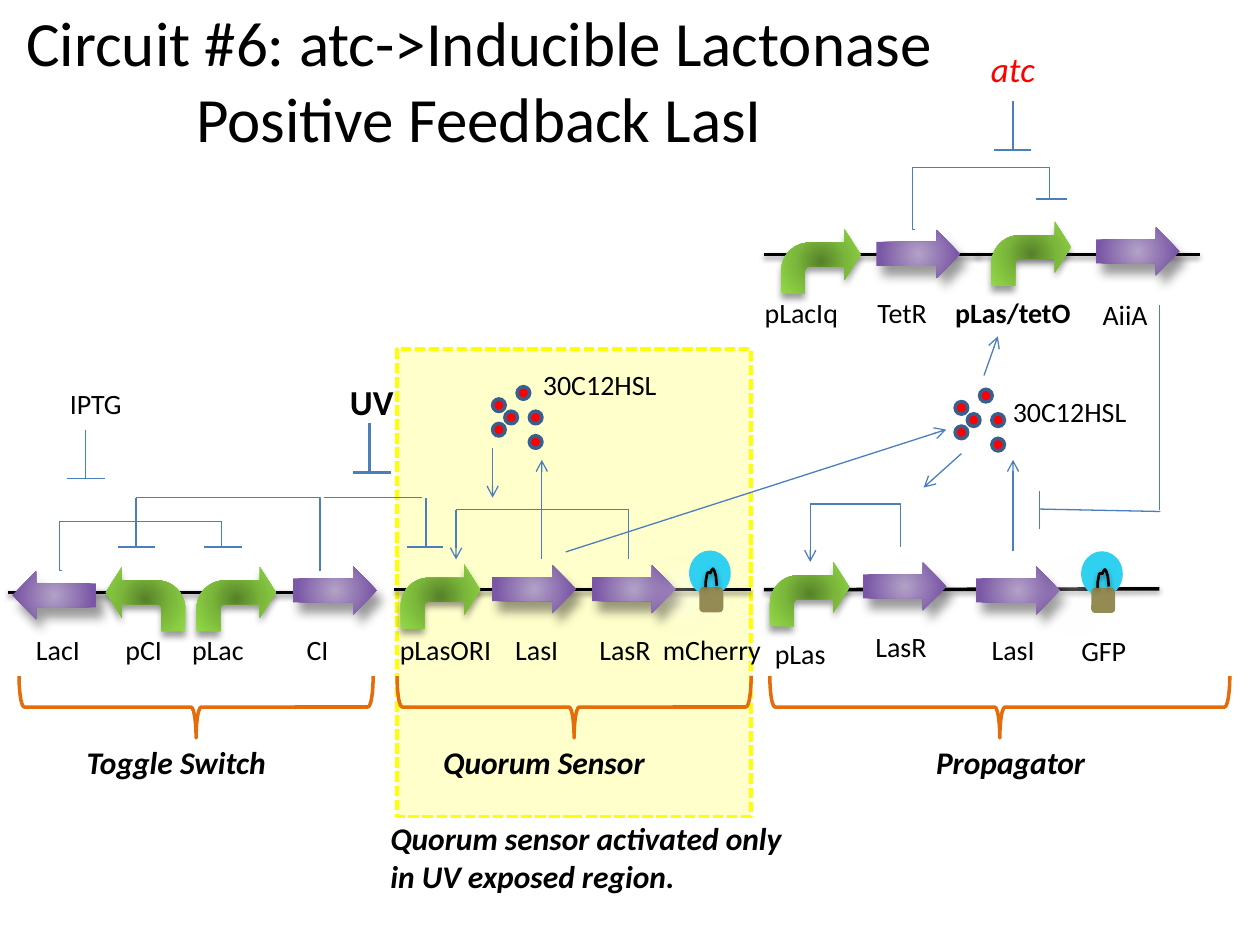
from lxml.etree import SubElement
from pptx import Presentation
from pptx.dml.color import RGBColor as RGB
from pptx.enum.dml import MSO_LINE as DASH
from pptx.enum.shapes import MSO_CONNECTOR as LINK, MSO_SHAPE as SHAPE
from pptx.enum.text import MSO_ANCHOR as ANCHOR, MSO_AUTO_SIZE as FIT, PP_ALIGN as ALIGN
from pptx.oxml import parse_xml
from pptx.oxml.ns import nsdecls, qn
from pptx.util import Pt

THEME = {
    "black": "000000", "red": "FF0000", "wire": "4B7EBC", "rim": "3A5F8C",
    "region": "FFFF00", "brace": "E46C0A", "glow": "30D0F0", "stem": "948A54",
    "promoter": [(0, "57812A"), (50, "7BB73B"), (100, "92DA46")],
    "gene": [(0, "B3A2C7"), (80, "7B58A6"), (100, "7C57A8")],
    # text styles: colour and font format values
    "title": ("000000", {"size": Pt(36)}),
    "label": ("000000", {"size": Pt(16)}),
    "strong": ("000000", {"size": Pt(16), "bold": True}),
    "uv": ("000000", {"size": Pt(20), "bold": True}),
    "inducer": ("FF0000", {"size": Pt(20), "italic": True}),
    "module": ("000000", {"size": Pt(18), "bold": True, "italic": True}),
}
# colour, opacity %, blur, distance, direction
STRAND_SHADOW = ("000000", 38, 3.1, 1.6, 90)
PROMOTER_SHADOW = ("000000", 40, 4, 3, 90)
GENE_SHADOW = ("000000", 40, 6, 7, 60)
GLOW_SHADOW = ("FFFFFF", 28, 11.8, 19.7, 141)

prs = Presentation()
prs.slide_width, prs.slide_height = Pt(720), Pt(540)
shapes = prs.slides.add_slide(prs.slide_layouts[6]).shapes


def finish(shape, fill=None, line=None, weight=2, shadow=None):
    """Set fill, line and shadow; connectors have no fill."""
    if hasattr(shape, "fill"):
        if fill:
            shape.fill.solid()
            shape.fill.fore_color.rgb = RGB.from_string(fill)
        else:
            shape.fill.background()
    if line:
        shape.line.color.rgb = RGB.from_string(line)
        shape.line.width = Pt(weight)
    else:
        shape.line.fill.background()
    effects = SubElement(shape._element.spPr, qn("a:effectLst"))
    if shadow:
        color, opacity, blur, distance, angle = shadow
        outer = SubElement(effects, qn("a:outerShdw"), blurRad=str(Pt(blur)),
                           dist=str(Pt(distance)), dir=str(angle * 60000), rotWithShape="0")
        tint = SubElement(outer, qn("a:srgbClr"), val=color)
        SubElement(tint, qn("a:alpha"), val=str(opacity * 1000))
    return shape


def wire(x1, y1, x2, y2, kind=LINK.STRAIGHT, weight=0.75, color=THEME["wire"], shadow=None):
    link = shapes.add_connector(kind, Pt(x1), Pt(y1), Pt(x2), Pt(y2))
    return finish(link, line=color, weight=weight, shadow=shadow)


# UV-exposed region
region = shapes.add_shape(SHAPE.RECTANGLE, Pt(226.8), Pt(199.4), Pt(202.3), Pt(267.1))
finish(region, THEME["region"], THEME["region"])
region.line.dash_style = DASH.SQUARE_DOT
region_tint = region._element.spPr.find(qn("a:solidFill"))[0]
SubElement(region_tint, qn("a:alpha"), val="20000")

# DNA strands
for x1, y1, x2, y2 in [(558, 145.5, 685.5, 145.5), (436.5, 145.5, 559.5, 145.5),
                       (225.4, 337, 429, 337), (4.5, 338.5, 209, 338.5),
                       (436.5, 337, 662.5, 336.5)]:
    wire(x1, y1, x2, y2, weight=2, color=THEME["black"], shadow=STRAND_SHADOW)

# Promoters and genes
part_looks = {"promoter": (SHAPE.BENT_ARROW, 45.4, 36.7, PROMOTER_SHADOW),
              "gene": (SHAPE.DOWN_ARROW, 27.4, 48.2, GENE_SHADOW)}
for part, x, y, facing in [
        ("promoter", 112.3, 324, "right"), ("promoter", 60.5, 324, "left"),
        ("promoter", 229, 322.5, "right"), ("promoter", 440, 321.1, "right"),
        ("promoter", 566.6, 126.7, "right"), ("promoter", 446.4, 131, "right"),
        ("gene", 17.3, 316.1, "left"), ("gene", 177.8, 313.2, "right"),
        ("gene", 291.6, 312.5, "right"), ("gene", 348.5, 312.5, "right"),
        ("gene", 503.3, 311, "right"), ("gene", 568.1, 313.2, "right"),
        ("gene", 511.2, 121, "right"), ("gene", 636.5, 119.5, "right")]:
    outline, width, height, shadow = part_looks[part]
    arrow = finish(shapes.add_shape(outline, Pt(x), Pt(y), Pt(width), Pt(height)), shadow=shadow)
    if part == "gene":
        arrow.rotation = 270 if facing == "right" else 90
    else:
        for i, value in enumerate((0.37, 0.394, 0.25, 0.438)):
            arrow.adjustments[i] = value
        if facing == "left":
            arrow._element.spPr.find(qn("a:xfrm")).set("flipH", "1")
    stops = "".join(f'<a:gs pos="{pos * 1000}"><a:srgbClr val="{color}"/></a:gs>'
                    for pos, color in THEME[part])
    radial = parse_xml(f'<a:gradFill {nsdecls("a")} rotWithShape="1"><a:gsLst>{stops}</a:gsLst>'
                       '<a:path path="circle"><a:fillToRect l="50000" t="50000" r="50000"'
                       ' b="50000"/></a:path></a:gradFill>')
    props = arrow._element.spPr
    props.replace(props.find(qn("a:noFill")), radial)

# Fluorescent reporters: glow, stem and hairpin
hairpin = [(9.4, 20.9), (9.5, 17.8), (10.1, 14.4), (10.4, 12.9), (11.2, 12.5), (12.2, 12.9),
           (12.8, 11.3), (13.6, 10.4), (14.4, 11.5), (15.3, 14.5), (15.8, 20.2)]
for x, y in [(393.8, 314.6), (617.8, 315)]:
    glow = shapes.add_shape(SHAPE.OVAL, Pt(x), Pt(y), Pt(23.8), Pt(25.9))
    finish(glow, THEME["glow"], shadow=GLOW_SHADOW)
    stem = shapes.add_shape(SHAPE.ROUNDED_RECTANGLE, Pt(x + 5.8), Pt(y + 20.9), Pt(13.7), Pt(14.4))
    finish(stem, THEME["stem"])
    start, *bends = [(Pt(x + dx), Pt(y + dy)) for dx, dy in hairpin]
    strand = shapes.build_freeform(*start)
    strand.add_line_segments(bends, close=False)
    finish(strand.convert_to_shape(), line=THEME["black"], weight=1.5, shadow=STRAND_SHADOW)

# Signal molecules
for x, y in [(281.5, 221), (545.8, 222.5)]:
    for column, row in [(1, 2), (3, 4), (3, 2), (2, 0), (0, 1), (0, 3)]:
        dot = shapes.add_shape(SHAPE.OVAL, Pt(x + 7 * column), Pt(y + 7 * row), Pt(7.2), Pt(7.2))
        finish(dot, THEME["red"], THEME["rim"])

# Elbows: up from the gene, then across
for x1, y1, x2, y2, bend in [(182.9, 326.2, 77.8, 284.4, 0), (35.3, 326.2, 126.7, 298.1, -1500),
                             (359.3, 319.7, 260.6, 291.2, 0), (514.8, 312.5, 463, 288, 0),
                             (522.7, 131, 599.8, 95.8, -1500)]:
    elbow = wire(x1, y1, x2, y2, LINK.ELBOW)
    geometry = elbow._element.spPr.find(qn("a:prstGeom"))
    guides = geometry.find(qn("a:avLst"))
    if guides is None:
        guides = SubElement(geometry, qn("a:avLst"))
    SubElement(guides, qn("a:gd"), name="adj1", fmla=f"val {bend}")

# Repression: stem and crossbar
for x, top, bottom, bar_left, bar_right, weight in [
        (77.8, 284.4, 312.5, 67.7, 88.6, 0.75), (126.7, 298.1, 312.5, 116.6, 138.2, 0.75),
        (243.4, 284.4, 312.5, 232.6, 253.4, 0.75), (211, 241.9, 270, 201.6, 223.2, 1.5),
        (49, 245.5, 273.6, 38.2, 59.8, 0.75), (599.8, 95.8, 113.8, 591.8, 609.8, 0.75),
        (578.9, 57.6, 85.7, 568.1, 589, 0.75)]:
    wire(x, top, x, bottom, weight=weight)
    wire(bar_left, bottom, bar_right, bottom, weight=weight)

# Plain links: CI to the sensor, AiiA to the signal
for ends in [(185, 284.4, 241.2, 284.4), (662.4, 174.2, 662.4, 291.6),
             (663.1, 292.3, 594, 290.9), (594, 280.8, 594, 302.4)]:
    wire(*ends)

# Activation arrows
for ends in [(260.6, 291.6, 260.6, 319.7), (281.5, 256.3, 281.5, 284.4),
             (309.6, 319.7, 309.6, 262.8), (549.4, 259.2, 527.8, 278.6),
             (323.3, 315.4, 540.7, 245.5), (578.9, 314.6, 578.9, 262.8),
             (463, 288, 463, 321.1), (562.3, 214.6, 570.2, 192.2)]:
    activation = wire(*ends)
    SubElement(activation._element.spPr.find(qn("a:ln")), qn("a:tailEnd"), type="arrow")

# Module braces
for center, span in [(112, 202.3), (328, 202.3), (571.3, 262.8)]:
    brace = shapes.add_shape(SHAPE.LEFT_BRACE, Pt(center - 17.6), Pt(404 - span / 2),
                             Pt(35.3), Pt(span))
    brace.rotation = 270
    finish(brace, line=THEME["brace"])

# Title, labels and captions
for text, x, y, width, height, style in [
        ("Circuit #6: atc->Inducible Lactonase\vPositive Feedback LasI",
         1.4, -5.8, 545, 102.2, "title"),
        ("LacI", 0, 357.8, 66.2, 24, "label"), ("pCI", 49, 357.8, 66.2, 24, "label"),
        ("pLac", 91.4, 357.8, 66.2, 24, "label"), ("CI", 140.4, 357.8, 82, 24, "label"),
        ("pLasORI", 218.2, 357.8, 72.7, 26.6, "label"), ("LasI", 265.7, 357.8, 82, 24, "label"),
        ("LasR", 324, 357.8, 66.2, 24, "label"), ("mCherry", 365.8, 357.8, 82, 24, "label"),
        ("pLas", 424.1, 360, 66.2, 24, "label"), ("LasR", 473.8, 356.4, 82, 26.6, "label"),
        ("LasI", 545.8, 357.8, 66.2, 26.6, "label"), ("GFP", 589.7, 358.6, 82, 24, "label"),
        ("pLacIq", 424.8, 165.6, 66.2, 26.6, "label"), ("TetR", 474.5, 165.6, 82, 26.6, "label"),
        ("pLas/tetO", 537.8, 165.6, 82, 26.6, "strong"),
        ("AiiA", 601.9, 166.3, 82, 26.6, "label"),
        ("IPTG", 13.7, 217.4, 82, 24, "label"), ("UV", 171.4, 213.8, 82, 28, "uv"),
        ("atc", 537.8, 23.8, 82, 31.7, "inducer"),
        ("30C12HSL", 301.7, 206.6, 82, 26.6, "label"),
        ("30C12HSL", 570.2, 221.8, 82, 26.6, "label"),
        ("Toggle Switch", 42.5, 421.2, 175.7, 35.3, "module"),
        ("Quorum Sensor", 246.2, 421.2, 175.7, 35.3, "module"),
        ("Propagator", 527.8, 421.2, 175.7, 35.3, "module"),
        ("Quorum sensor activated only in UV exposed region.", 216, 464.4, 247, 46.1, "module")]:
    frame = shapes.add_textbox(Pt(x), Pt(y), Pt(width), Pt(height)).text_frame
    is_title = style == "title"
    frame_format = {"word_wrap": True, "text": text,
                    "auto_size": FIT.NONE if is_title else FIT.SHAPE_TO_FIT_TEXT,
                    "vertical_anchor": ANCHOR.MIDDLE if is_title else ANCHOR.TOP}
    for name, value in frame_format.items():
        setattr(frame, name, value)
    paragraph = frame.paragraphs[0]
    paragraph.alignment = ALIGN.LEFT if style == "module" else ALIGN.CENTER
    color, font_format = THEME[style]
    for run in paragraph.runs:
        for name, value in {"name": "Calibri", **font_format}.items():
            setattr(run.font, name, value)
        run.font.color.rgb = RGB.from_string(color)

prs.save("out.pptx")
